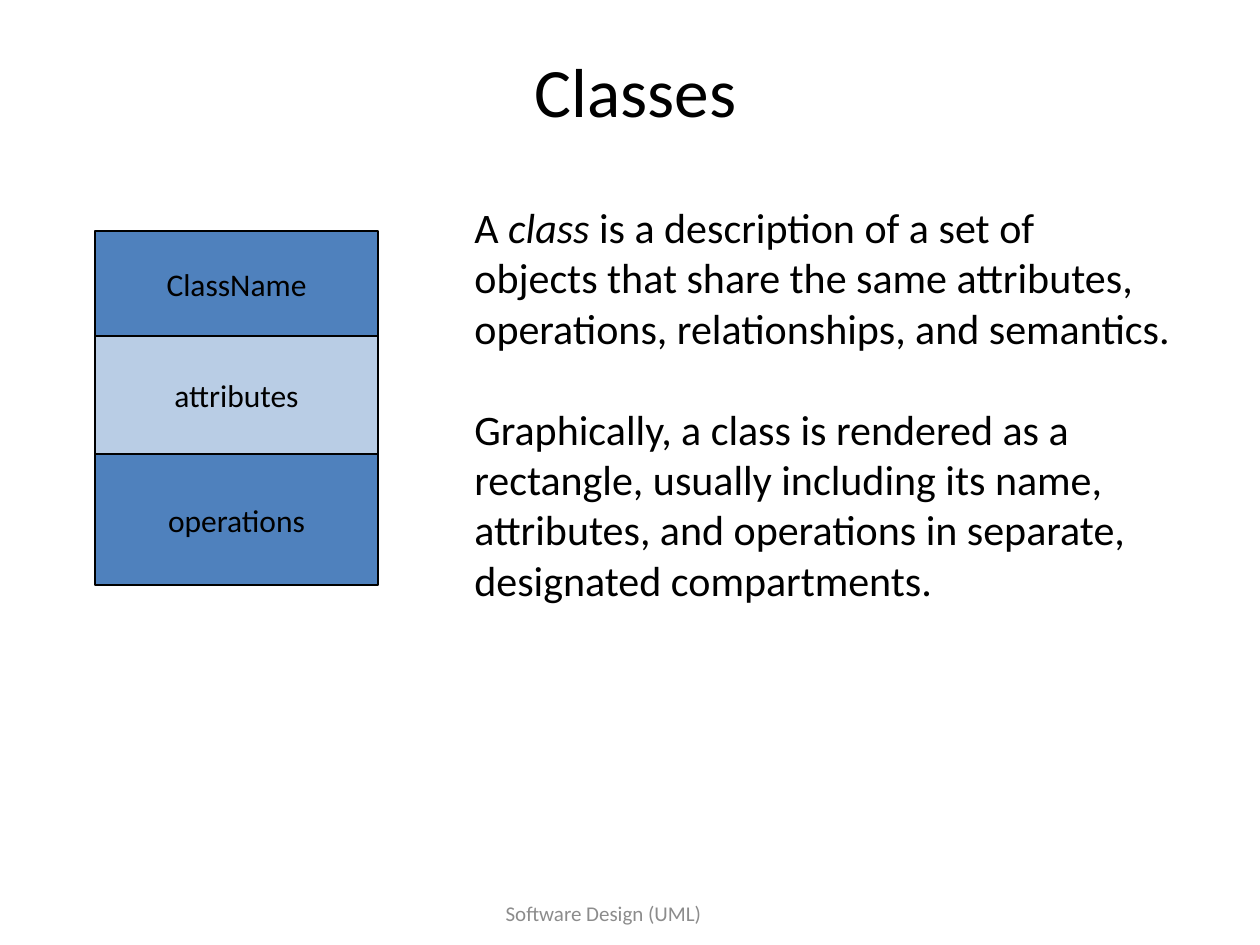
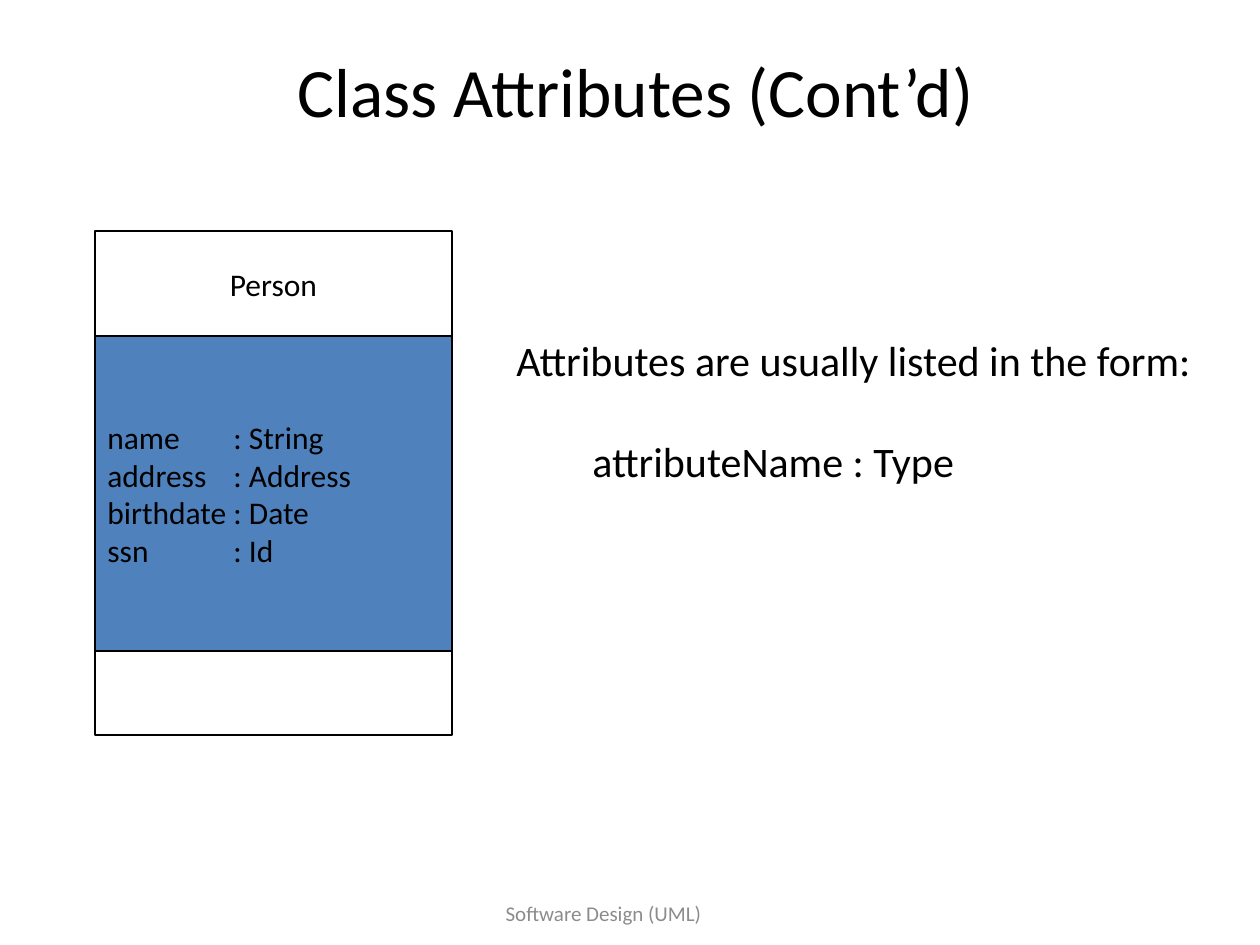
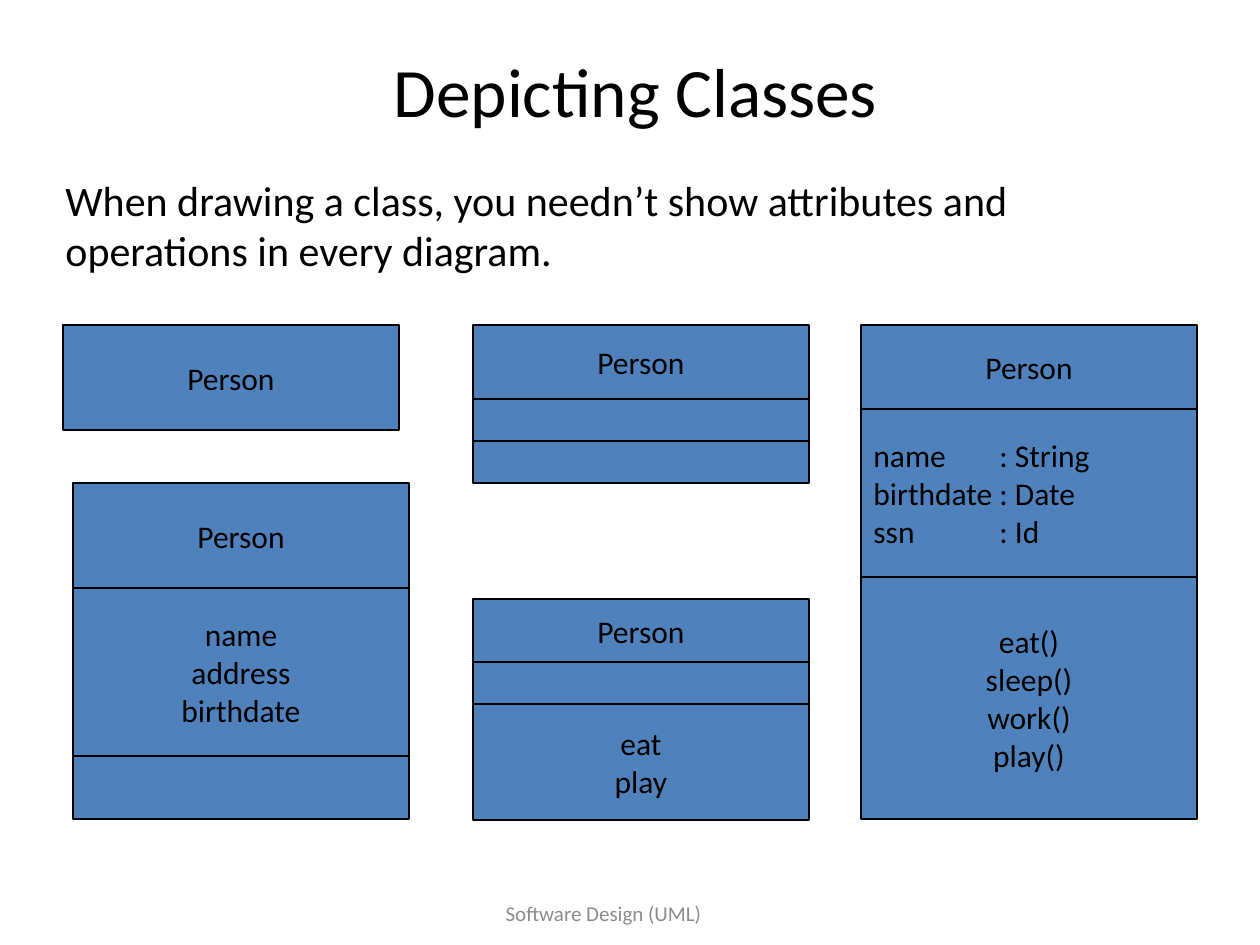
from pptx import Presentation
from pptx.dml.color import RGBColor
from pptx.enum.shapes import MSO_SHAPE
from pptx.enum.text import MSO_ANCHOR, MSO_AUTO_SIZE, PP_ALIGN
from pptx.oxml.ns import qn
from pptx.util import Pt
from lxml.etree import SubElement

PX = 914400 / 126
FONT = "Calibri"
BLACK, WHITE, GREY = "000000", "FFFFFF", "8C8C8C"
BLUE, PALE = "4F81BD", "B9CDE5"
LEFT, CENTER = PP_ALIGN.LEFT, PP_ALIGN.CENTER

FOOTER = "Software Design (UML)"
FOOTER_AREA = (325, 882, 557, 63)
TITLE_AREA = (95, 53, 1081, 73)
TYPE_TAB = 126
LINE_GAP = 29

SLIDES = [
    {
        "title": "Classes",
        "classes": [
            (95, 231, 283, [
                (105, BLUE, ["ClassName"]),
                (118, PALE, ["attributes"]),
                (131, BLUE, ["operations"]),
            ]),
        ],
        "text_area": (462, 195, 765, 420),
        "text": [
            {"spans": [("A ", False), ("class", True), (" is a description of a set of", False)]},
            {"spans": [("objects that share the same attributes,", False)]},
            {"spans": [("operations, relationships, and semantics.", False)]},
            {"spans": [("Graphically, a class is rendered as a", False)], "before": LINE_GAP},
            {"spans": [("rectangle, usually including its name,", False)]},
            {"spans": [("attributes, and operations in separate,", False)]},
            {"spans": [("designated compartments.", False)]},
        ],
    },
    {
        "title": "Class Attributes (Cont’d)",
        "classes": [
            (95, 231, 357, [
                (105, WHITE, ["Person"]),
                (315, BLUE, ["name\t: String", "address\t: Address", "birthdate\t: Date", "ssn\t: Id"]),
                (84, WHITE, []),
            ]),
        ],
        "text_area": (504, 328, 707, 204),
        "text": [
            {"spans": [("Attributes are usually listed in the form:", False)]},
            {"spans": [("attributeName : Type", False)], "before": LINE_GAP, "indent": 76},
        ],
    },
    {
        "title": "Depicting Classes",
        "classes": [
            (861, 325, 336, [
                (84, BLUE, ["Person"]),
                (168, BLUE, ["name\t: String", "birthdate\t: Date", "ssn\t: Id"]),
                (242, BLUE, ["eat()", "sleep()", "work()", "play()"]),
            ]),
            (63, 325, 336, [(105, BLUE, ["Person"])]),
            (73, 483, 336, [
                (105, BLUE, ["Person"]),
                (168, BLUE, ["name", "address", "birthdate"]),
                (63, BLUE, []),
            ]),
            (473, 599, 336, [
                (63, BLUE, ["Person"]),
                (42, BLUE, []),
                (116, BLUE, ["eat", "play"]),
            ]),
            (473, 325, 336, [
                (74, BLUE, ["Person"]),
                (42, BLUE, []),
                (42, BLUE, []),
            ]),
        ],
        "text_area": (53, 168, 1150, 115),
        "text": [
            {"spans": [("When drawing a class, you needn’t show attributes and operations in every diagram.", False)]},
        ],
    },
]


def px(length):
    return round(length * PX)


def color(value):
    return RGBColor.from_string(value)


def style(para, size, shade=BLACK, align=LEFT):
    para.alignment = align
    para.font.name = FONT
    para.font.size = Pt(size)
    para.font.color.rgb = color(shade)


def next_para(frame, index):
    return frame.add_paragraph() if index else frame.paragraphs[0]


def add_tab_stop(para, position):
    tabs = SubElement(para._p.get_or_add_pPr(), qn("a:tabLst"))
    SubElement(tabs, qn("a:tab"), pos=str(px(position)), algn="l")
    properties = para._p.pPr
    properties.insert(list(properties).index(properties.find(qn("a:defRPr"))), tabs)


def add_title(page, text):
    title = page.shapes.title
    title.left, title.top, title.width, title.height = map(px, TITLE_AREA)
    frame = title.text_frame
    frame.text = text
    frame.auto_size = MSO_AUTO_SIZE.NONE
    frame.vertical_anchor = MSO_ANCHOR.MIDDLE
    style(frame.paragraphs[0], 39.6, align=CENTER)


def add_text_box(page, area):
    frame = page.shapes.add_textbox(*map(px, area)).text_frame
    frame.word_wrap = True
    return frame


def add_footer(page):
    frame = add_text_box(page, FOOTER_AREA)
    frame.vertical_anchor = MSO_ANCHOR.MIDDLE
    frame.text = FOOTER
    style(frame.paragraphs[0], 12, GREY, CENTER)


def add_compartment(page, area, fill, lines):
    box = page.shapes.add_shape(MSO_SHAPE.RECTANGLE, *map(px, area))
    box.shadow.inherit = False
    box.fill.solid()
    box.fill.fore_color.rgb = color(fill)
    box.line.color.rgb = color(BLACK)
    box.line.width = Pt(0.75)
    frame = box.text_frame
    frame.vertical_anchor = MSO_ANCHOR.MIDDLE
    for index, line in enumerate(lines):
        para = next_para(frame, index)
        para.add_run().text = line
        typed = "\t" in line
        style(para, 18, align=LEFT if typed else CENTER)
        if typed:
            add_tab_stop(para, TYPE_TAB)


def add_class(page, left, top, width, compartments):
    for height, fill, lines in compartments:
        add_compartment(page, (left, top, width, height), fill, lines)
        top += height


def add_description(page, area, content):
    frame = add_text_box(page, area)
    for index, item in enumerate(content):
        para = next_para(frame, index)
        style(para, 24)
        para.space_before = Pt(item.get("before", 0))
        if "indent" in item:
            para._p.get_or_add_pPr().set("marL", str(px(item["indent"])))
        for text, italic in item["spans"]:
            span = para.add_run()
            span.text = text
            if italic:
                span.font.italic = True


def main():
    deck = Presentation()
    deck.slide_width, deck.slide_height = px(1260), px(945)
    for content in SLIDES:
        page = deck.slides.add_slide(deck.slide_layouts[5])
        add_footer(page)
        add_title(page, content["title"])
        for diagram in content["classes"]:
            add_class(page, *diagram)
        add_description(page, content["text_area"], content["text"])
    deck.save("out.pptx")


if __name__ == "__main__":
    main()
